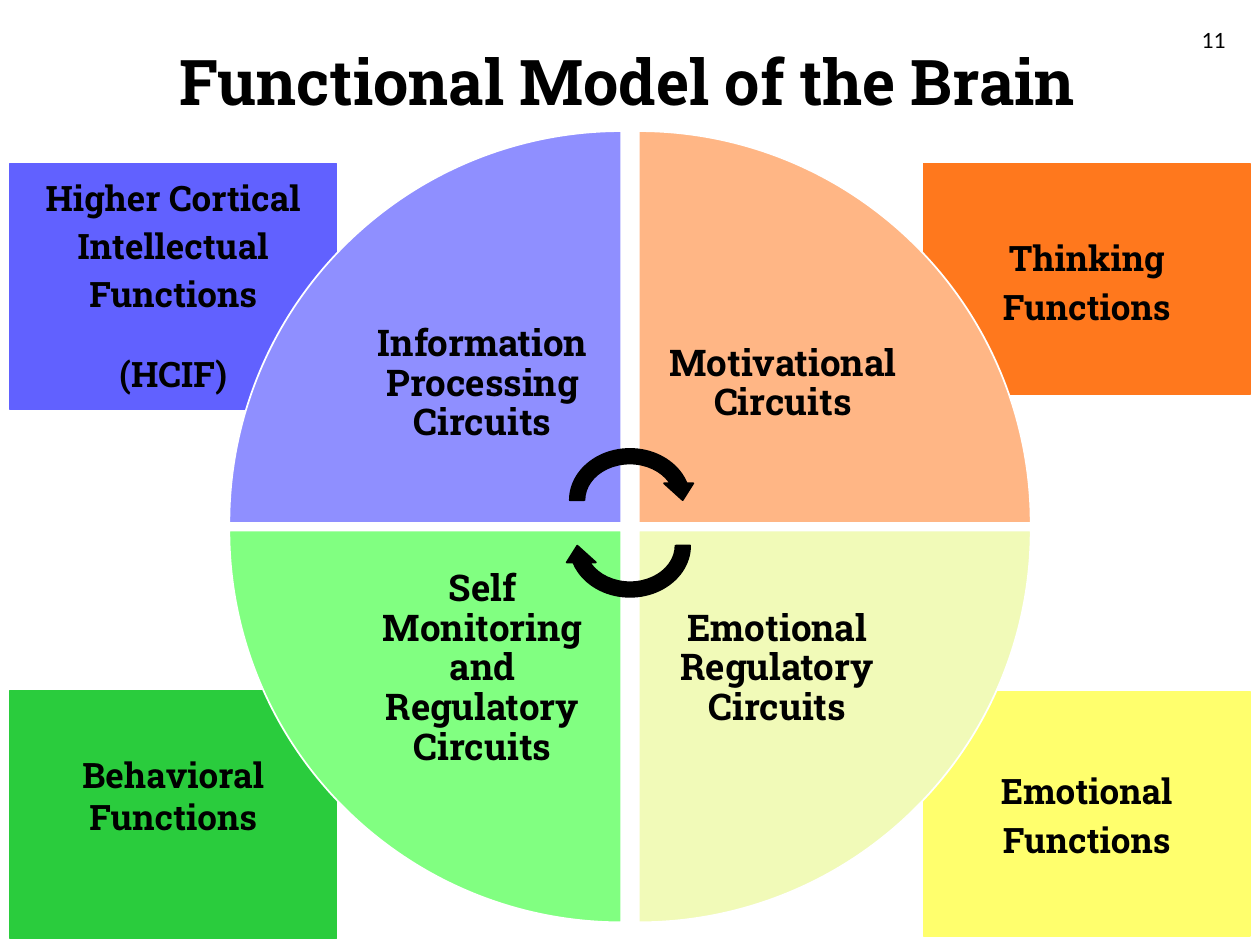
from dataclasses import dataclass

from pptx import Presentation
from pptx.dml.color import RGBColor
from pptx.enum.shapes import MSO_SHAPE
from pptx.enum.text import MSO_ANCHOR, PP_ALIGN
from pptx.util import Inches, Pt


@dataclass(frozen=True)
class Theme:
    heading_font: str = "Roboto Slab"
    number_font: str = "Lato"
    ink: str = "000000"
    wedge_line: str = "FFFFFF"
    title_size: int = 36
    function_size: int = 20
    circuit_size: int = 21
    number_size: int = 12


THEME = Theme()
TITLE = "Functional Model of the Brain"
SLIDE_NUMBER = "11"

# paragraphs, column, top, height, fill, text inset from top, line spacing, space after
FUNCTIONS = [
    (["Emotional Functions"], 1, 5.49, 1.94, "FFFF6D", 0.57, 1.15, 10),
    (["Behavioral Functions"], 0, 5.48, 1.97, "2ACC3D", 0.5, 1, 0),
    (["Thinking Functions"], 1, 1.3, 1.83, "FF781D", 0.53, 1.15, 10),
    (["Higher Cortical Intellectual Functions", "(HCIF)"],
     0, 1.3, 1.95, "6161FF", 0.05, 1.15, 18),
]
# label, column, row, fill, right inset; clockwise from top left
CIRCUITS = [
    ("Information Processing Circuits", 0, 0, "8F8FFF", 0.16),
    ("Motivational Circuits", 1, 0, "FFB685", 0.07),
    ("Emotional Regulatory Circuits", 1, 1, "F1FAB8", 0.16),
    ("Self Monitoring and Regulatory Circuits", 0, 1, "81FF81", 0.16),
]

SLIDE_WIDTH, SLIDE_HEIGHT = 10, 7.5
SIDE_MARGIN, FUNCTION_WIDTH = 0.08, 2.59
CENTER_X, CENTER_Y = 5, 4.18
HALF_GAP_X, HALF_GAP_Y = 0.07, 0.03
WEDGE, LABEL = 3.11, 2.2
ARROW_WIDTH, ARROW_HEIGHT = 1.07, 0.93
ARROW_OFFSET = 0.18


def write(shape, paragraphs, *, size, font=THEME.heading_font, bold=True,
          align=PP_ALIGN.CENTER, anchor=MSO_ANCHOR.TOP, line_spacing=1,
          space_after=0, insets=(0.1, 0.05, 0.1, 0.05)):
    """Fill a shape with paragraphs; insets run left, top, right, bottom."""
    frame = shape.text_frame
    frame.word_wrap = True
    frame.vertical_anchor = anchor
    (frame.margin_left, frame.margin_top,
     frame.margin_right, frame.margin_bottom) = map(Inches, insets)
    frame.text = "\n".join(paragraphs)
    for paragraph in frame.paragraphs:
        paragraph.alignment = align
        paragraph.line_spacing = line_spacing
        paragraph.space_after = Pt(space_after)
        for run in paragraph.runs:
            run.font.name = font
            run.font.size = Pt(size)
            run.font.bold = bold
            run.font.color.rgb = RGBColor.from_string(THEME.ink)


def add_preset(slide, preset, box, fill, line, line_width=1, rotation=0):
    shape = slide.shapes.add_shape(preset, *map(Inches, box))
    shape.shadow.inherit = False
    shape.fill.solid()
    shape.fill.fore_color.rgb = RGBColor.from_string(fill)
    shape.line.color.rgb = RGBColor.from_string(line)
    shape.line.width = Pt(line_width)
    shape.rotation = rotation
    return shape


def add_text(slide, box, paragraphs, **text_format):
    write(slide.shapes.add_textbox(*map(Inches, box)), paragraphs, **text_format)


def quadrant_box(column, row, side):
    """Square of the given side that touches the inner corner of a quadrant."""
    left = CENTER_X + HALF_GAP_X if column else CENTER_X - HALF_GAP_X - side
    top = CENTER_Y + HALF_GAP_Y if row else CENTER_Y - HALF_GAP_Y - side
    return left, top, side, side


def add_functions(slide):
    for paragraphs, column, top, height, fill, inset, spacing, after in FUNCTIONS:
        left = SLIDE_WIDTH - SIDE_MARGIN - FUNCTION_WIDTH if column else SIDE_MARGIN
        block = add_preset(slide, MSO_SHAPE.RECTANGLE,
                           (left, top, FUNCTION_WIDTH, height), fill, fill, 0.75)
        write(block, paragraphs, size=THEME.function_size, line_spacing=spacing,
              space_after=after, insets=(0.1, inset, 0.1, 0.05))


def add_circuits(slide):
    for turn, (label, column, row, fill, right_inset) in enumerate(CIRCUITS):
        add_preset(slide, MSO_SHAPE.PIE_WEDGE, quadrant_box(column, row, WEDGE),
                   fill, THEME.wedge_line, rotation=90 * turn)
        add_text(slide, quadrant_box(column, row, LABEL), [label],
                 size=THEME.circuit_size, anchor=MSO_ANCHOR.MIDDLE,
                 line_spacing=0.9, insets=(0.16, 0.16, right_inset, 0.16))


def add_cycle_arrows(slide):
    for direction, rotation in ((-1, 0), (1, 180)):
        middle = CENTER_Y - 0.03 + direction * ARROW_OFFSET
        add_preset(slide, MSO_SHAPE.CIRCULAR_ARROW,
                   (CENTER_X - ARROW_WIDTH / 2, middle - ARROW_HEIGHT / 2,
                    ARROW_WIDTH, ARROW_HEIGHT),
                   THEME.ink, THEME.ink, rotation=rotation)


def main():
    deck = Presentation()
    deck.slide_width, deck.slide_height = Inches(SLIDE_WIDTH), Inches(SLIDE_HEIGHT)
    slide = deck.slides.add_slide(deck.slide_layouts[6])
    add_functions(slide)
    add_text(slide, (0.23, 0.29, 9.5, 0.71), [TITLE], size=THEME.title_size)
    add_circuits(slide)
    add_cycle_arrows(slide)
    add_text(slide, (9, 0.17, 0.83, 0.27), [SLIDE_NUMBER], size=THEME.number_size,
             font=THEME.number_font, bold=False, align=PP_ALIGN.RIGHT)
    deck.save("out.pptx")


if __name__ == "__main__":
    main()
